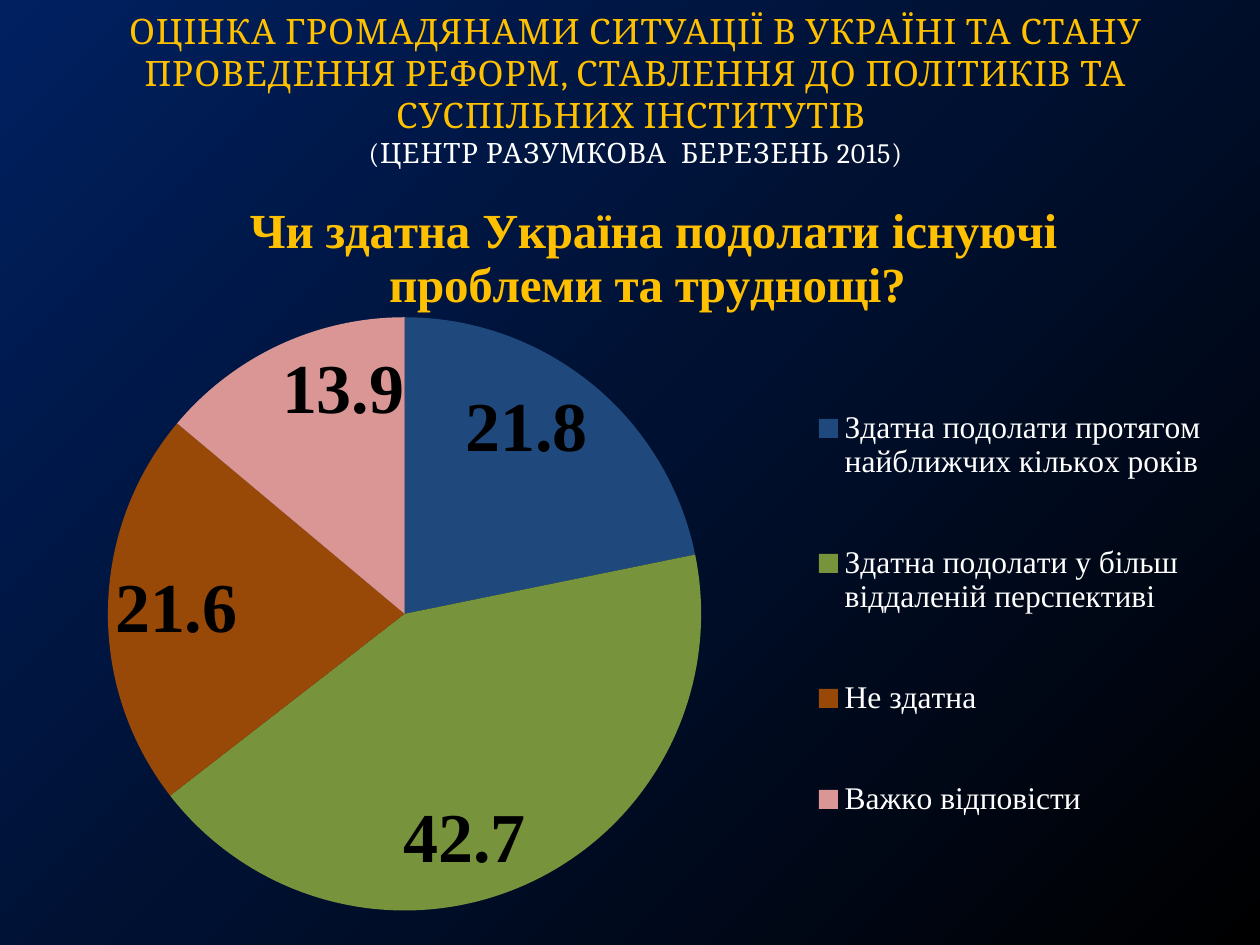
from copy import deepcopy

from lxml import etree
from pptx import Presentation
from pptx.chart.data import CategoryChartData
from pptx.dml.color import RGBColor
from pptx.enum.chart import XL_CHART_TYPE, XL_LABEL_POSITION, XL_LEGEND_POSITION
from pptx.enum.text import MSO_ANCHOR, MSO_AUTO_SIZE, PP_ALIGN
from pptx.oxml import parse_xml
from pptx.oxml.ns import nsdecls, qn
from pptx.util import Cm, Pt

COLORS = {
    "navy": "002060", "deep": "001030", "black": "000000",
    "gold": "FFC000", "white": "FFFFFF",
}
HEADING = ("ОЦІНКА ГРОМАДЯНАМИ СИТУАЦІЇ В УКРАЇНІ ТА СТАНУ ПРОВЕДЕННЯ РЕФОРМ, "
           "СТАВЛЕННЯ ДО ПОЛІТИКІВ ТА СУСПІЛЬНИХ ІНСТИТУТІВ ")
SURVEY = "(ЦЕНТР РАЗУМКОВА  БЕРЕЗЕНЬ 2015)"
QUESTION = "Чи здатна Україна подолати існуючі проблеми та труднощі? "
# Answer, share in percent, slice colour
ANSWERS = [
    ("Здатна подолати протягом найближчих кількох років", 21.8, "1F497D"),
    ("Здатна подолати у більш віддаленій перспективі", 42.7, "77933C"),
    ("Не здатна", 21.6, "984807"),
    ("Важко відповісти", 13.9, "D99694"),
]


def style_font(font, name, size, color, bold=False):
    font.name = name
    font.size = Pt(size)
    font.bold = bold
    font.color.rgb = RGBColor.from_string(COLORS[color])


def paint_background(slide):
    fill = slide.background.fill
    fill.gradient()
    fill.gradient_angle = 315
    first_stop = slide.background._cSld.find(".//" + qn("a:gs"))
    first_stop.addnext(deepcopy(first_stop))
    stops = zip(fill.gradient_stops, (0, 0.5, 1), ("navy", "deep", "black"))
    for stop, position, color in stops:
        stop.position = position
        stop.color.rgb = RGBColor.from_string(COLORS[color])


def add_heading(slide, left, top, width, height):
    title = slide.shapes.title
    title.left, title.top, title.width, title.height = left, top, width, height
    text_frame = title.text_frame
    text_frame.word_wrap = True
    text_frame.auto_size = MSO_AUTO_SIZE.NONE
    text_frame.vertical_anchor = MSO_ANCHOR.BOTTOM
    paragraph = text_frame.paragraphs[0]
    paragraph.text = HEADING + "\v" + SURVEY
    paragraph.alignment = PP_ALIGN.CENTER
    for run, size, color in zip(paragraph.runs, (20, 16), ("gold", "white")):
        style_font(run.font, "Cambria", size, color)
        run.font._element.set("spc", "50")


def set_layout(parent, follows, x, y, width=None, height=None, inner=False):
    """Place a chart part by fractions of the chart area."""
    for old_layout in parent.findall(qn("c:layout")):
        parent.remove(old_layout)
    layout = parse_xml(f"<c:layout {nsdecls('c')}><c:manualLayout/></c:layout>")
    values = {"layoutTarget": "inner" if inner else None,
              "xMode": "edge", "yMode": "edge",
              "x": x, "y": y, "w": width, "h": height}
    for tag, value in values.items():
        if value is not None:
            etree.SubElement(layout[0], qn("c:" + tag)).set("val", str(value))
    if follows is None:
        parent.insert(0, layout)
    else:
        parent.find(qn(follows)).addnext(layout)


def add_answer_chart(slide, left, top, width, height):
    chart_data = CategoryChartData()
    chart_data.categories = [answer for answer, _, _ in ANSWERS]
    chart_data.add_series(QUESTION, [share for _, share, _ in ANSWERS])
    chart = slide.shapes.add_chart(
        XL_CHART_TYPE.PIE, left, top, width, height, chart_data).chart
    style_font(chart.font, "Times New Roman", 18, "white")

    # Question above the pie
    chart.has_title = True
    chart.chart_title.text_frame.text = QUESTION
    question_run = chart.chart_title.text_frame.paragraphs[0].runs[0]
    style_font(question_run.font, "Times New Roman", 28, "gold", bold=True)
    chart.chart_title.include_in_layout = False
    set_layout(chart.chart_title._element, "c:tx", 0.17, 0.02)

    # Slices and their values
    plot = chart.plots[0]
    plot.vary_by_categories = True
    for index, (_, _, color) in enumerate(ANSWERS):
        slice_fill = plot.series[0].points[index].format.fill
        slice_fill.solid()
        slice_fill.fore_color.rgb = RGBColor.from_string(color)
    plot.has_data_labels = True
    labels = plot.data_labels
    labels.show_value = True
    labels.number_format = "0.0"
    labels.number_format_is_linked = False
    labels.position = XL_LABEL_POSITION.INSIDE_END
    style_font(labels.font, "Times New Roman", 40, "black", bold=True)
    plot_area = chart._chartSpace.find(".//" + qn("c:plotArea"))
    set_layout(plot_area, None, 0.06, 0.14, 0.49, 0.86, inner=True)

    # Legend with the answers
    chart.has_legend = True
    chart.legend.position = XL_LEGEND_POSITION.RIGHT
    chart.legend.include_in_layout = False
    style_font(chart.legend.font, "Times New Roman", 18, "white")
    set_layout(chart.legend._element, "c:legendPos", 0.62, 0.22, 0.37, 0.7)


def main():
    presentation = Presentation()
    presentation.slide_width, presentation.slide_height = Cm(25.4), Cm(19.05)
    slide = presentation.slides.add_slide(presentation.slide_layouts[5])
    paint_background(slide)
    add_heading(slide, Cm(0.71), Cm(0.33), Cm(24.21), Cm(3.2))
    add_answer_chart(slide, Cm(0.71), Cm(3.53), Cm(24.41), Cm(15.52))
    presentation.save("out.pptx")


if __name__ == "__main__":
    main()
